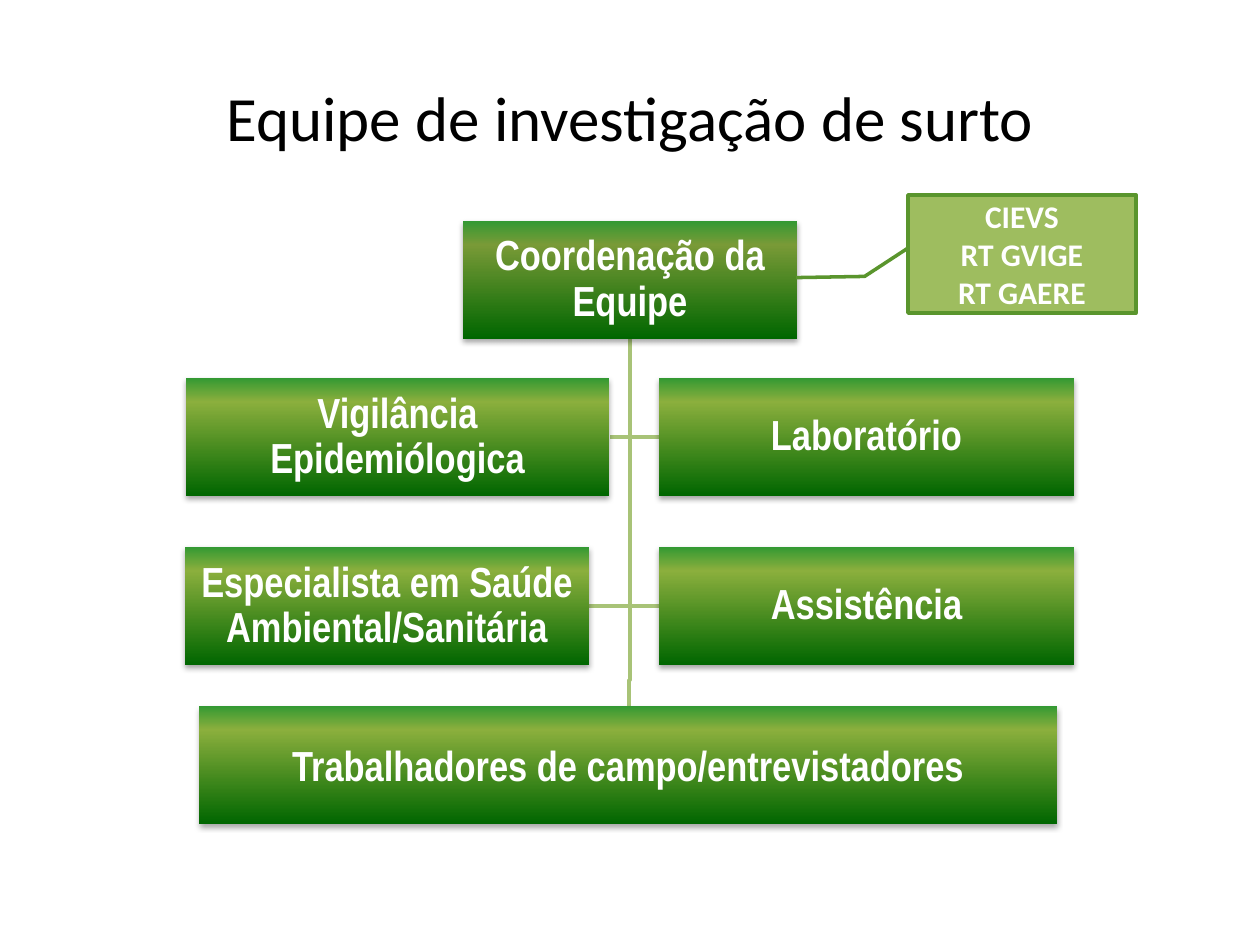
"""Build the organisation chart slide of an outbreak investigation team."""
from copy import deepcopy

from pptx import Presentation
from pptx.dml.color import RGBColor
from pptx.enum.shapes import MSO_SHAPE
from pptx.enum.text import MSO_ANCHOR, PP_ALIGN
from pptx.oxml import parse_xml
from pptx.oxml.ns import nsdecls, qn
from pptx.util import Emu, Pt

RECTANGLE = MSO_SHAPE.RECTANGLE
CALLOUT = MSO_SHAPE.LINE_CALLOUT_2
MIDDLE = MSO_ANCHOR.MIDDLE
CENTER = PP_ALIGN.CENTER

BLACK = RGBColor(0x00, 0x00, 0x00)
WHITE = RGBColor(0xFF, 0xFF, 0xFF)
DARK_GREEN = RGBColor(0x00, 0x66, 0x00)
OLIVE = RGBColor(0x79, 0x9A, 0x37)
LIME = RGBColor(0x8B, 0xAF, 0x3D)
TOP_GREEN = RGBColor(0x33, 0x99, 0x33)
LINK_GREEN = RGBColor(0xA8, 0xC3, 0x77)
CALLOUT_FILL = RGBColor(0x9E, 0xBD, 0x5F)
CALLOUT_LINE = RGBColor(0x5A, 0x95, 0x2D)

EMU_PER_PX = 914400 / 126
BOX_HEIGHT = 118
TRUNK = 630
RIGHT_COLUMN = 659
COORDINATION_TOP, ROW_1, ROW_2, FIELD_TOP = 221, 378, 547, 706
SHADOW = (
    f'<a:outerShdw {nsdecls("a")} blurRad="40000" dist="23000" dir="5400000" rotWithShape="0">'
    '<a:srgbClr val="000000"><a:alpha val="35000"/></a:srgbClr></a:outerShdw>'
)


def px(*lengths):
    return [Emu(round(length * EMU_PER_PX)) for length in lengths]


def write(shape, lines, font_name, size, color, bold=True, spacing=1.0):
    frame = shape.text_frame
    frame.word_wrap = True
    frame.vertical_anchor = MIDDLE
    frame.text = "\n".join(lines)
    for paragraph in frame.paragraphs:
        paragraph.alignment = CENTER
        paragraph.line_spacing = spacing
        paragraph.font.name = font_name
        paragraph.font.size = Pt(size)
        paragraph.font.bold = bold
        paragraph.font.color.rgb = color


presentation = Presentation()
presentation.slide_width, presentation.slide_height = px(1260, 945)
slide = presentation.slides.add_slide(presentation.slide_layouts[6])

title = slide.shapes.add_textbox(*px(63, 38, 1134, 157))
write(title, ["Equipe de investigação de surto"], "Calibri", 36, BLACK, bold=False)

trunk_top = COORDINATION_TOP + BOX_HEIGHT
links = [
    [(TRUNK, row + BOX_HEIGHT // 2), (side, row + BOX_HEIGHT // 2)]
    for row, left_edge in ((ROW_2, 589), (ROW_1, 610))
    for side in (RIGHT_COLUMN, left_edge)
]
links.append([(TRUNK, 680), (TRUNK - 1, 680), (TRUNK - 1, FIELD_TOP)])
for points in links:
    builder = slide.shapes.build_freeform(TRUNK, trunk_top, EMU_PER_PX)
    builder.add_line_segments(points, close=False)
    link = builder.convert_to_shape()
    link.shadow.inherit = False
    link.fill.background()
    link.line.color.rgb = LINK_GREEN
    link.line.width = Pt(2)

boxes = [
    ("Coordenação da Equipe", 463, COORDINATION_TOP, 334, OLIVE, 0.9),
    ("Trabalhadores de campo/entrevistadores", 199, FIELD_TOP, 858, LIME, 1.0),
    ("Vigilância Epidemiólogica", 186, ROW_1, 423, LIME, 0.9),
    ("Laboratório", RIGHT_COLUMN, ROW_1, 415, LIME, 0.9),
    ("Especialista em Saúde Ambiental/Sanitária", 185, ROW_2, 404, LIME, 0.9),
    ("Assistência", RIGHT_COLUMN, ROW_2, 415, LIME, 0.9),
]
for text, left, top, width, middle_color, spacing in boxes:
    box = slide.shapes.add_shape(RECTANGLE, *px(left, top, width, BOX_HEIGHT))
    box.line.fill.background()
    box.fill.gradient()
    box.fill.gradient_angle = 90
    stop_list = box._element.spPr.find(".//" + qn("a:gsLst"))
    stop_list.insert(1, deepcopy(stop_list[0]))
    colors = ((0, DARK_GREEN), (0.8, middle_color), (1, TOP_GREEN))
    for stop, (position, color) in zip(box.fill.gradient_stops, colors):
        stop.position = position
        stop.color.rgb = color
    box.shadow.inherit = False
    box._element.spPr.find(qn("a:effectLst")).append(parse_xml(SHADOW))
    frame = box.text_frame
    frame.margin_left, frame.margin_top, frame.margin_right, frame.margin_bottom = px(2, 2, 2, 2)
    write(box, [text], "Arial Narrow", 24, WHITE, spacing=spacing)

callout = slide.shapes.add_shape(CALLOUT, *px(908, 195, 228, 118))
for index, value in enumerate((0.45, 0, 0.69, -0.19, 0.7, -0.49)):
    callout.adjustments[index] = value
callout.shadow.inherit = False
callout.fill.solid()
callout.fill.fore_color.rgb = CALLOUT_FILL
callout.line.color.rgb = CALLOUT_LINE
callout.line.width = Pt(2)
write(callout, ["CIEVS", "RT GVIGE", "RT GAERE"], "Calibri", 18, WHITE)

presentation.save("out.pptx")
